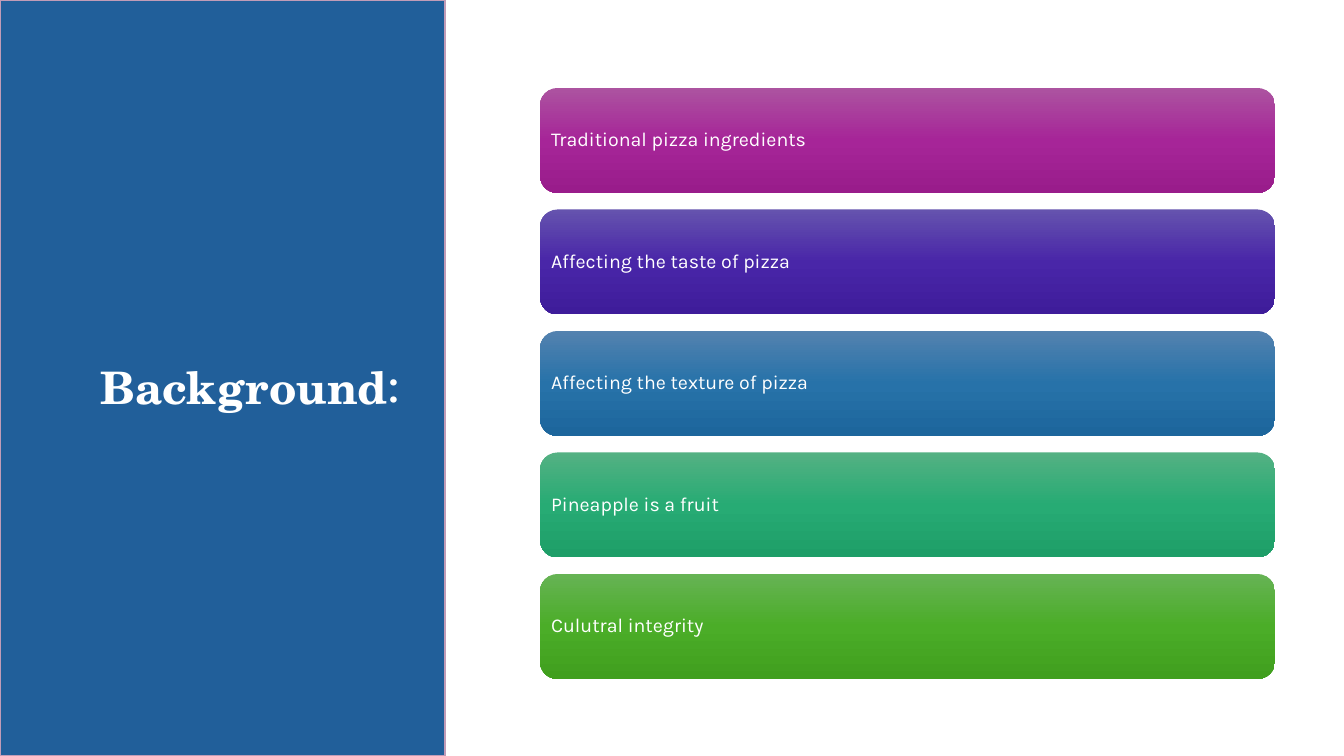
import copy

import pptx
import pptx.dml.color
import pptx.enum.shapes
import pptx.enum.text
import pptx.oxml.ns
import pptx.util

RGB = pptx.dml.color.RGBColor
SHAPE = pptx.enum.shapes.MSO_SHAPE
ALIGN = pptx.enum.text.PP_ALIGN
ANCHOR = pptx.enum.text.MSO_ANCHOR

WHITE = RGB(0xFF, 0xFF, 0xFF)
PANEL_BLUE = RGB(0x21, 0x5F, 0x9A)
PANEL_EDGE = RGB(0xC1, 0x9C, 0xB7)
PURPLE = RGB(0xAC, 0x53, 0xA0), RGB(0xA6, 0x25, 0x98), RGB(0x99, 0x1C, 0x8B)
INDIGO = RGB(0x65, 0x53, 0xAE), RGB(0x49, 0x26, 0xA8), RGB(0x3E, 0x1C, 0x9A)
BLUE = RGB(0x53, 0x82, 0xAF), RGB(0x27, 0x72, 0xA9), RGB(0x1D, 0x66, 0x9C)
TEAL = RGB(0x54, 0xB1, 0x83), RGB(0x27, 0xAB, 0x74), RGB(0x1E, 0x9E, 0x68)
GREEN = RGB(0x66, 0xB3, 0x54), RGB(0x4B, 0xAD, 0x28), RGB(0x40, 0x9F, 0x1E)

# Content
TITLE = [
    ("Background", dict(name="TeX Gyre Schola", size=pptx.util.Pt(32), bold=True)),
    (":", dict(name="Karla", size=pptx.util.Pt(40), bold=False)),
]
TOPICS = [
    ("Traditional pizza ingredients", PURPLE),
    ("Affecting the taste of pizza", INDIGO),
    ("Affecting the texture of pizza", BLUE),
    ("Pineapple is a fruit", TEAL),
    ("Culutral integrity", GREEN),
]
TOPIC_FONT = dict(name="Karla", size=pptx.util.Pt(14), bold=False)

# Layout in px
PAGE_WIDTH, PAGE_HEIGHT = 1344, 756
PANEL = (0, 0, 445, PAGE_HEIGHT)
TITLE_BOX = (67, 347, 344, 75)
BAR_LEFT, BAR_WIDTH, BAR_HEIGHT = 540, 735, 105
BARS_TOP, BARS_BOTTOM = 88, 679
BAR_INSET = 6
BAR_PITCH = (BARS_BOTTOM - BARS_TOP - BAR_HEIGHT) / (len(TOPICS) - 1)


def px(length):
    return pptx.util.Emu(round(length * 914400 / 100.8))


def add_span(para, text, font):
    span = para.add_run()
    span.text = text
    for key, value in font.items():
        setattr(span.font, key, value)
    span.font.color.rgb = WHITE


def add_box(page, kind, place):
    box = page.shapes.add_shape(kind, *map(px, place))
    box.shadow.inherit = False
    return box


def fill_gradient(box, colours):
    box.fill.gradient()
    box.fill.gradient_angle = 270
    stop_list = box._element.spPr.find(".//" + pptx.oxml.ns.qn("a:gsLst"))
    stop_list.insert(1, copy.deepcopy(stop_list[0]))
    for index, (stop, colour) in enumerate(zip(box.fill.gradient_stops, colours)):
        stop.position = index / (len(colours) - 1)
        stop.color.rgb = colour


def main():
    deck = pptx.Presentation()
    deck.slide_width, deck.slide_height = px(PAGE_WIDTH), px(PAGE_HEIGHT)
    page = deck.slides.add_slide(deck.slide_layouts[5])
    title = page.shapes.title

    # Side panel, placed behind the title
    panel = add_box(page, SHAPE.RECTANGLE, PANEL)
    panel.fill.solid()
    panel.fill.fore_color.rgb = PANEL_BLUE
    panel.line.color.rgb = PANEL_EDGE
    panel.line.width = pptx.util.Pt(1.5)
    title._element.addprevious(panel._element)

    # Title
    title.left, title.top, title.width, title.height = map(px, TITLE_BOX)
    title.fill.solid()
    title.fill.fore_color.rgb = PANEL_BLUE
    frame = title.text_frame
    frame.word_wrap = True
    frame.auto_size = pptx.enum.text.MSO_AUTO_SIZE.NONE
    frame.vertical_anchor = ANCHOR.BOTTOM
    para = frame.paragraphs[0]
    para.alignment = ALIGN.RIGHT
    para.line_spacing = 0.9
    for text, font in TITLE:
        add_span(para, text, font)

    # Topic bars
    for index, (text, colours) in enumerate(TOPICS):
        top = BARS_TOP + index * BAR_PITCH
        bar = add_box(page, SHAPE.ROUNDED_RECTANGLE, (BAR_LEFT, top, BAR_WIDTH, BAR_HEIGHT))
        fill_gradient(bar, colours)
        bar.line.fill.background()
        frame = bar.text_frame
        frame.word_wrap = True
        frame.vertical_anchor = ANCHOR.MIDDLE
        for side in ("left", "top", "right", "bottom"):
            setattr(frame, "margin_" + side, px(BAR_INSET))
        para = frame.paragraphs[0]
        para.alignment = ALIGN.LEFT
        para.line_spacing = 0.9
        add_span(para, text, TOPIC_FONT)

    deck.save("out.pptx")


if __name__ == "__main__":
    main()
